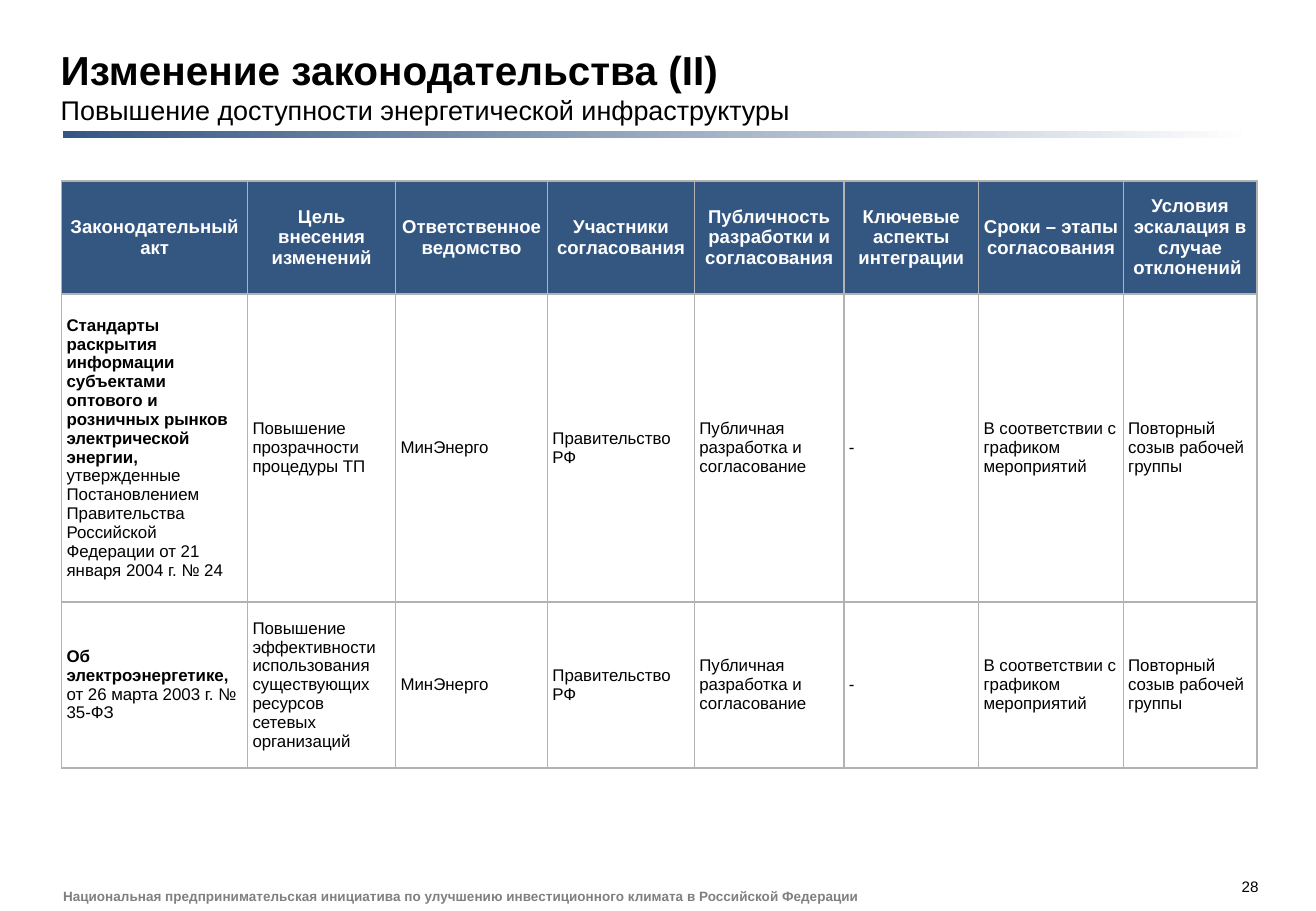
import pptx
import pptx.dml.color
import pptx.enum.shapes
import pptx.enum.text
import pptx.oxml
import pptx.oxml.ns
import pptx.util
from dataclasses import dataclass

Pt = pptx.util.Pt
RGB = pptx.dml.color.RGBColor
ALIGN = pptx.enum.text.PP_ALIGN
ANCHOR = pptx.enum.text.MSO_ANCHOR

TITLE = "Изменение законодательства (II)"
SUBTITLE = "Повышение доступности энергетической инфраструктуры"
FOOTER = "Национальная предпринимательская инициатива по улучшению инвестиционного климата в Российской Федерации"
PAGE_NUMBER = "28"

HEADERS = [
    "Законодательный акт", "Цель внесения изменений", "Ответственное ведомство",
    "Участники согласования", "Публичность разработки и согласования",
    "Ключевые аспекты интеграции", "Сроки – этапы согласования",
    "Условия эскалация в случае отклонений ",
]
LAWS = [
    ("Стандарты раскрытия информации субъектами оптового и розничных рынков электрической энергии, ",
     "утвержденные Постановлением Правительства Российской Федерации от 21 января 2004 г. № 24",
     "Повышение прозрачности процедуры ТП"),
    ("Об электроэнергетике, ",
     "от 26 марта 2003 г. № 35-ФЗ",
     "Повышение эффективности использования существующих ресурсов сетевых организаций"),
]
COMMON_TERMS = [
    "МинЭнерго", "Правительство РФ", "Публичная разработка и согласование", "-",
    "В соответствии с графиком мероприятий", "Повторный созыв рабочей группы",
]
COLUMN_WIDTHS = [110.2, 87.8, 90, 87.1, 88.6, 79.9, 85.7, 79.2]
ROW_HEIGHTS = [67, 182.5, 98.5]


@dataclass
class Theme:
    font: str = "Arial"
    accent: str = "345782"
    white: str = "FFFFFF"
    black: str = "000000"
    grey: str = "808080"
    border: str = "B2B2B2"
    title: float = 24
    subtitle: float = 16
    header: float = 11
    body: float = 10
    number: float = 9
    footer: float = 8


theme = Theme()


def style(span, size, color=theme.black, bold=False):
    span.font.name = theme.font
    span.font.size = Pt(size)
    span.font.bold = bold
    span.font.color.rgb = RGB.from_string(color)


def set_margins(box, side, edge):
    box.margin_left = box.margin_right = Pt(side)
    box.margin_top = box.margin_bottom = Pt(edge)


def place(shape, left, top, width, height):
    shape.left, shape.top, shape.width, shape.height = map(Pt, (left, top, width, height))


def add_label(page, text, bounds, align, size, color=theme.black, bold=False):
    frame = page.shapes.add_textbox(*map(Pt, bounds)).text_frame
    set_margins(frame, 0, 0)
    frame.word_wrap = False
    frame.vertical_anchor = ANCHOR.MIDDLE
    frame.text = text
    para = frame.paragraphs[0]
    para.alignment = align
    style(para.runs[0], size, color, bold)


def add_borders(cell):
    properties = cell._tc.get_or_add_tcPr()
    for side in ("lnL", "lnR", "lnT", "lnB"):
        properties.append(pptx.oxml.parse_xml(
            f'<a:{side} {pptx.oxml.ns.nsdecls("a")} w="{Pt(1)}"><a:solidFill>'
            f'<a:srgbClr val="{theme.border}"/></a:solidFill></a:{side}>'))


def fill_cell(cell, parts, is_header):
    set_margins(cell, 2.9, 7.2)
    cell.vertical_anchor = ANCHOR.MIDDLE
    add_borders(cell)
    para = cell.text_frame.paragraphs[0]
    para.alignment = ALIGN.CENTER if is_header else ALIGN.LEFT
    for text, bold in parts:
        span = para.add_run()
        span.text = text
        if is_header:
            style(span, theme.header, theme.white, bold)
        else:
            style(span, theme.body, bold=bold)
    if is_header:
        cell.fill.solid()
        cell.fill.fore_color.rgb = RGB.from_string(theme.accent)
    else:
        cell.fill.background()


def add_title(page):
    heading = page.shapes.title
    place(heading, 36, 13, 708, 65.5)
    frame = heading.text_frame
    set_margins(frame, 0, 3.6)
    frame.word_wrap = True
    frame.auto_size = pptx.enum.text.MSO_AUTO_SIZE.NONE
    frame.vertical_anchor = ANCHOR.BOTTOM
    para = frame.paragraphs[0]
    para.text = TITLE + "\v" + SUBTITLE
    para.alignment = ALIGN.LEFT
    style(para.runs[0], theme.title, bold=True)
    style(para.runs[1], theme.subtitle)


def add_rule(page):
    rule = page.shapes.add_shape(
        pptx.enum.shapes.MSO_SHAPE.RECTANGLE, Pt(37.4), Pt(77.8), Pt(705.6), Pt(4.3))
    rule.shadow.inherit = False
    rule.line.fill.background()
    rule.fill.gradient()
    rule.fill.gradient_angle = 0
    for stop, color in zip(rule.fill.gradient_stops, (theme.accent, theme.white)):
        stop.color.rgb = RGB.from_string(color)


def add_law_table(page):
    rows = [[[(text, True)] for text in HEADERS]]
    for law, details, purpose in LAWS:
        plain = [[(text, False)] for text in [purpose] + COMMON_TERMS]
        rows.append([[(law, True), (details, False)]] + plain)
    table = page.shapes.add_table(
        len(rows), len(HEADERS), Pt(36.6), Pt(107.3),
        Pt(sum(COLUMN_WIDTHS)), Pt(sum(ROW_HEIGHTS))).table
    table.horz_banding = False
    for column, width in zip(table.columns, COLUMN_WIDTHS):
        column.width = Pt(width)
    for index, (row, height) in enumerate(zip(table.rows, ROW_HEIGHTS)):
        row.height = Pt(height)
        for cell, parts in zip(row.cells, rows[index]):
            fill_cell(cell, parts, index == 0)


def main():
    deck = pptx.Presentation()
    deck.slide_width, deck.slide_height = Pt(780), Pt(540)
    page = deck.slides.add_slide(deck.slide_layouts.get_by_name("Title Only"))
    add_title(page)
    add_rule(page)
    add_law_table(page)
    add_label(page, FOOTER, (37.4, 526.3, 476, 9.4), ALIGN.LEFT, theme.footer, theme.grey, True)
    add_label(page, PAGE_NUMBER, (730.8, 520.6, 15.1, 10.1), ALIGN.RIGHT, theme.number)
    deck.save("out.pptx")


if __name__ == "__main__":
    main()
